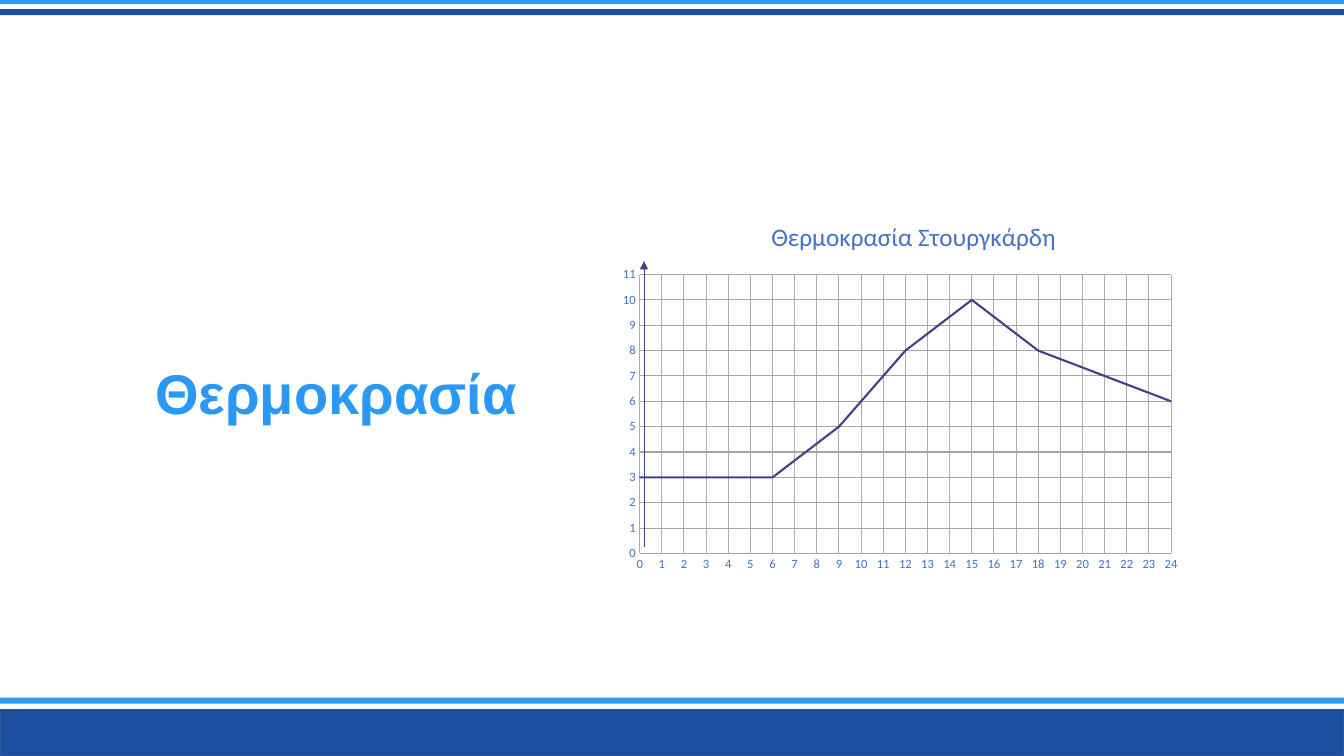
from lxml import etree
from pptx import Presentation
from pptx.chart.data import XyChartData
from pptx.dml.color import RGBColor
from pptx.enum.chart import XL_CHART_TYPE, XL_TICK_MARK
from pptx.enum.shapes import MSO_CONNECTOR, MSO_SHAPE
from pptx.enum.text import MSO_ANCHOR, MSO_AUTO_SIZE, PP_ALIGN
from pptx.oxml.ns import qn
from pptx.util import Pt

SMOOTH = XL_CHART_TYPE.XY_SCATTER_SMOOTH_NO_MARKERS
NO_TICK = XL_TICK_MARK.NONE
RECTANGLE = MSO_SHAPE.RECTANGLE
STRAIGHT = MSO_CONNECTOR.STRAIGHT
BOTTOM = MSO_ANCHOR.BOTTOM
LEFT = PP_ALIGN.LEFT
NO_FIT = MSO_AUTO_SIZE.NONE

COLORS = {
    "navy": "1B4E9F",
    "navy edge": "325491",
    "sky": "299AF5",
    "title": "2999F5",
    "label": "4472C4",
    "curve": "404484",
    "hour grid": "AFABAB",
    "degree grid": "A5A5A5",
}
TEMPERATURES = [3, 3, 3, 5, 8, 10, 8, 7, 6]
HOURS_APART = 3


class SlideBuilder:
    """Draws styled elements on the current slide."""

    def __init__(self, deck):
        self.page = deck.slides.add_slide(deck.slide_layouts[5])
        self.title_font = "Arial"
        self.chart_font = "Calibri"

    def color(self, name):
        return RGBColor.from_string(COLORS[name])

    def style_font(self, font, name, size, color, bold=False):
        font.name = name
        font.size = Pt(size)
        font.bold = bold
        font.color.rgb = self.color(color)

    def style_line(self, line, color, width):
        line.color.rgb = self.color(color)
        line.width = Pt(width)

    def bar(self, top, height, color, edge=None):
        box = self.page.shapes.add_shape(RECTANGLE, Pt(0), Pt(top), Pt(960), Pt(height))
        box.shadow.inherit = False
        box.fill.solid()
        box.fill.fore_color.rgb = self.color(color)
        if edge:
            self.style_line(box.line, edge, 1)
        else:
            box.line.fill.background()

    def title(self, text, left, top, width, height):
        box = self.page.shapes.title
        box.left, box.top, box.width, box.height = Pt(left), Pt(top), Pt(width), Pt(height)
        frame = box.text_frame
        frame.word_wrap = True
        frame.auto_size = NO_FIT
        frame.vertical_anchor = BOTTOM
        para = frame.paragraphs[0]
        para.alignment = LEFT
        para.line_spacing = 0.9
        span = para.add_run()
        span.text = text
        self.style_font(span.font, self.title_font, 40, "title", True)

    def axis(self, axis, maximum, grid_color):
        axis.minimum_scale, axis.maximum_scale, axis.major_unit = 0, maximum, 1
        axis.major_tick_mark = axis.minor_tick_mark = NO_TICK
        axis.format.line.fill.background()
        axis.has_major_gridlines = True
        self.style_line(axis.major_gridlines.format.line, grid_color, 0.75)
        self.style_font(axis.tick_labels.font, self.chart_font, 9, "label")

    def place(self, parent, position, **fractions):
        for old_layout in parent.findall(qn("c:layout")):
            parent.remove(old_layout)
        layout = etree.Element(qn("c:layout"))
        parent.insert(position, layout)
        manual = etree.SubElement(layout, qn("c:manualLayout"))
        if "w" in fractions:
            etree.SubElement(manual, qn("c:layoutTarget")).set("val", "inner")
        for mode in ("xMode", "yMode"):
            etree.SubElement(manual, qn("c:" + mode)).set("val", "edge")
        for name, value in fractions.items():
            etree.SubElement(manual, qn("c:" + name)).set("val", str(value))

    def temperature_chart(self, heading, left, top, width, height):
        data = XyChartData()
        points = data.add_series("Series 1")
        for index, degrees in enumerate(TEMPERATURES):
            points.add_data_point(index * HOURS_APART, degrees)
        frame = self.page.shapes.add_chart(
            SMOOTH, Pt(left), Pt(top), Pt(width), Pt(height), data)
        chart = frame.chart
        chart.has_legend = False
        chart.font.name = self.chart_font
        chart.font.size = Pt(10)
        chart.has_title = True
        span = chart.chart_title.text_frame.paragraphs[0].add_run()
        span.text = heading
        self.style_font(span.font, self.chart_font, 18, "label")
        self.axis(chart.category_axis, 24, "hour grid")
        self.axis(chart.value_axis, 11, "degree grid")
        plot = chart.plots[0]
        plot.vary_by_categories = False
        curve = plot.series[0]
        curve.smooth = True
        self.style_line(curve.format.line, "curve", 1.5)
        chart_element = chart.element.find(qn("c:chart"))
        self.place(chart_element.find(qn("c:title")), 1, x=0.27, y=0.02)
        self.place(chart_element.find(qn("c:plotArea")), 0, x=0.05, y=0.18, w=0.92, h=0.75)

    def arrow(self, x, start, end):
        line = self.page.shapes.add_connector(STRAIGHT, Pt(x), Pt(start), Pt(x), Pt(end))
        self.style_line(line.line, "curve", 0.5)
        outline = line.line._get_or_add_ln()
        etree.SubElement(outline, qn("a:tailEnd")).set("type", "triangle")
        etree.SubElement(line.element.spPr, qn("a:effectLst"))


def main():
    deck = Presentation()
    deck.slide_width, deck.slide_height = Pt(960), Pt(540)
    builder = SlideBuilder(deck)
    builder.bar(507, 33, "navy", "navy edge")
    builder.bar(0, 3, "sky")
    builder.bar(6.5, 4.3, "navy")
    builder.bar(498.4, 4.3, "sky")
    builder.title("Θερμοκρασία", 103.7, 234, 316, 74)
    builder.temperature_chart("Θερμοκρασία Στουργκάρδη", 436.3, 148.3, 412.6, 265.7)
    builder.arrow(460, 391, 186.5)
    deck.save("out.pptx")


if __name__ == "__main__":
    main()
